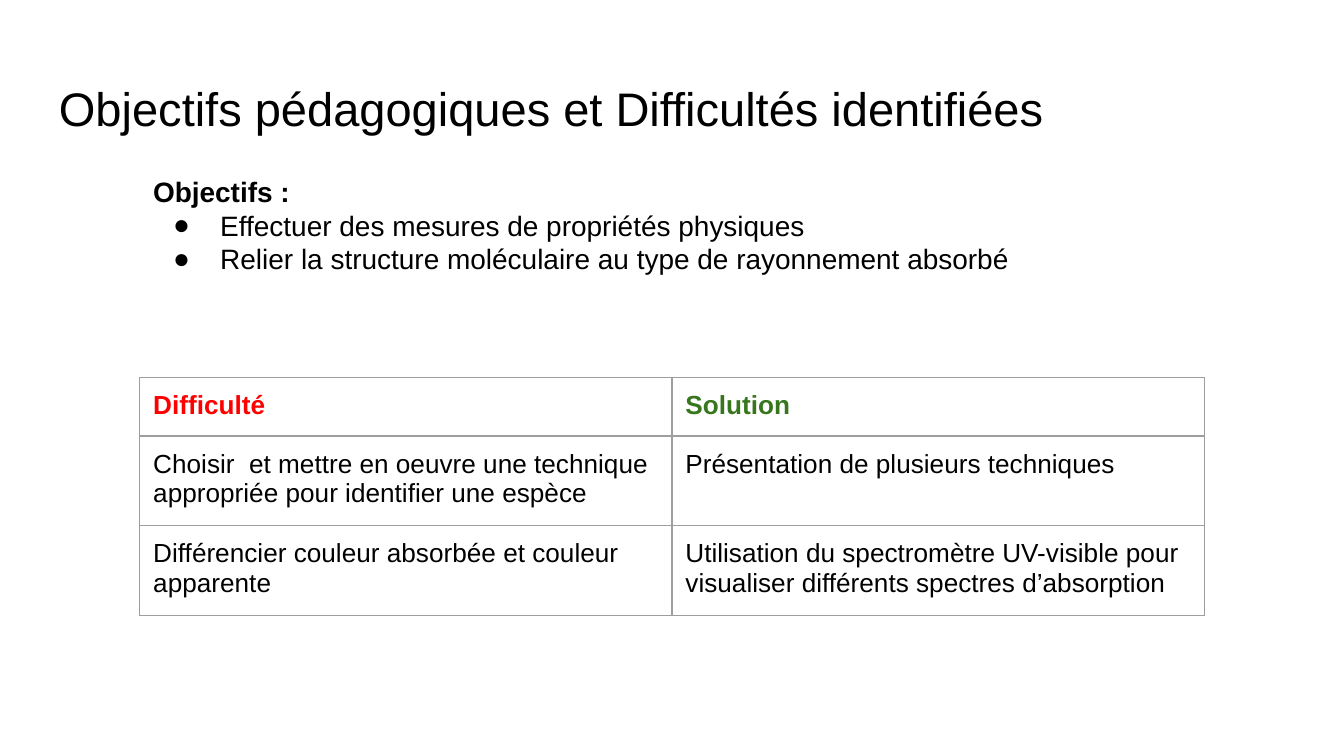
from dataclasses import dataclass

from lxml.etree import SubElement
from pptx import Presentation
from pptx.dml.color import RGBColor
from pptx.enum.text import MSO_ANCHOR, MSO_AUTO_SIZE
from pptx.oxml.ns import qn
from pptx.util import Inches, Pt

BLACK, RED, GREEN, GREY = "000000", "FF0000", "38761D", "9E9E9E"
MARGIN = Inches(0.1)
CONTENT_LEFT, CONTENT_WIDTH = 1.04, 7.92


@dataclass
class Line:
    text: str
    size: float
    color: str = BLACK
    bold: bool = False
    bullet: bool = False


def rgb(color: str) -> RGBColor:
    return RGBColor.from_string(color)


def add_bullet(paragraph) -> None:
    properties = paragraph._p.get_or_add_pPr()
    properties.set("marL", str(Inches(0.5)))
    properties.set("indent", str(Inches(-0.35)))
    bullet_color = SubElement(properties, qn("a:buClr"))
    SubElement(bullet_color, qn("a:srgbClr"), val=BLACK)
    SubElement(properties, qn("a:buFont"), typeface="Arial")
    SubElement(properties, qn("a:buChar"), char="●")


def write_lines(text_frame, lines: list[Line]) -> None:
    for index, line in enumerate(lines):
        paragraph = text_frame.add_paragraph() if index else text_frame.paragraphs[0]
        paragraph.text = line.text
        if line.bullet:
            add_bullet(paragraph)
        font = paragraph.font
        font.name, font.size, font.bold = "Arial", Pt(line.size), line.bold
        font.color.rgb = rgb(line.color)
        # The paragraph mark would otherwise stay at 18 pt and stretch the table rows.
        SubElement(paragraph._p, qn("a:endParaRPr"), sz=str(round(line.size * 100)))


def set_margins(target) -> None:
    target.margin_left = target.margin_right = MARGIN
    target.margin_top = target.margin_bottom = MARGIN


def add_text(slide, left: float, top: float, width: float, height: float,
             lines: list[Line], anchor=MSO_ANCHOR.TOP):
    box = slide.shapes.add_textbox(Inches(left), Inches(top), Inches(width), Inches(height))
    text_frame = box.text_frame
    text_frame.word_wrap = True
    text_frame.vertical_anchor = anchor
    set_margins(text_frame)
    write_lines(text_frame, lines)
    return box


def add_borders(cell) -> None:
    properties = cell._tc.get_or_add_tcPr()
    for side in ("lnL", "lnR", "lnT", "lnB"):
        border = SubElement(properties, qn(f"a:{side}"), w=str(Pt(0.75)))
        fill = SubElement(border, qn("a:solidFill"))
        SubElement(fill, qn("a:srgbClr"), val=GREY)


def add_grid(slide, left: float, top: float, width: float, row_height: float,
             rows: list[list[list[Line]]]) -> None:
    frame = slide.shapes.add_table(len(rows), len(rows[0]), Inches(left), Inches(top),
                                   Inches(width), Inches(row_height * len(rows)))
    table = frame.table
    table.first_row = table.horz_banding = False
    for row_index, row in enumerate(rows):
        for column_index, lines in enumerate(row):
            cell = table.cell(row_index, column_index)
            set_margins(cell)
            add_borders(cell)
            cell.fill.background()
            write_lines(cell.text_frame, lines)


def main() -> None:
    presentation = Presentation()
    presentation.slide_width = Inches(10)
    presentation.slide_height = Inches(10) * 9 // 16
    slide = presentation.slides.add_slide(presentation.slide_layouts[6])

    add_text(slide, 0.34, 0.49, 9.32, 0.63,
             [Line("Objectifs pédagogiques et Difficultés identifiées", 25.2)],
             MSO_ANCHOR.MIDDLE)

    add_grid(slide, CONTENT_LEFT, 2.81, CONTENT_WIDTH, 0.42, [
        [[Line("Difficulté", 14, RED, bold=True)],
         [Line("Solution", 14, GREEN, bold=True)]],
        [[Line("Choisir  et mettre en oeuvre une technique appropriée "
               "pour identifier une espèce", 14)],
         [Line("Présentation de plusieurs techniques", 14)]],
        [[Line("Différencier couleur absorbée et couleur apparente", 14)],
         [Line("Utilisation du spectromètre UV-visible pour", 14),
          Line("visualiser différents spectres d’absorption", 14)]],
    ])

    objectives = add_text(slide, CONTENT_LEFT, 1.2, CONTENT_WIDTH, 0.96, [
        Line("Objectifs :", 15, bold=True),
        Line("Effectuer des mesures de propriétés physiques", 15, bullet=True),
        Line("Relier la structure moléculaire au type de rayonnement absorbé", 15, bullet=True),
    ])
    objectives.text_frame.auto_size = MSO_AUTO_SIZE.SHAPE_TO_FIT_TEXT

    presentation.save("out.pptx")


if __name__ == "__main__":
    main()
